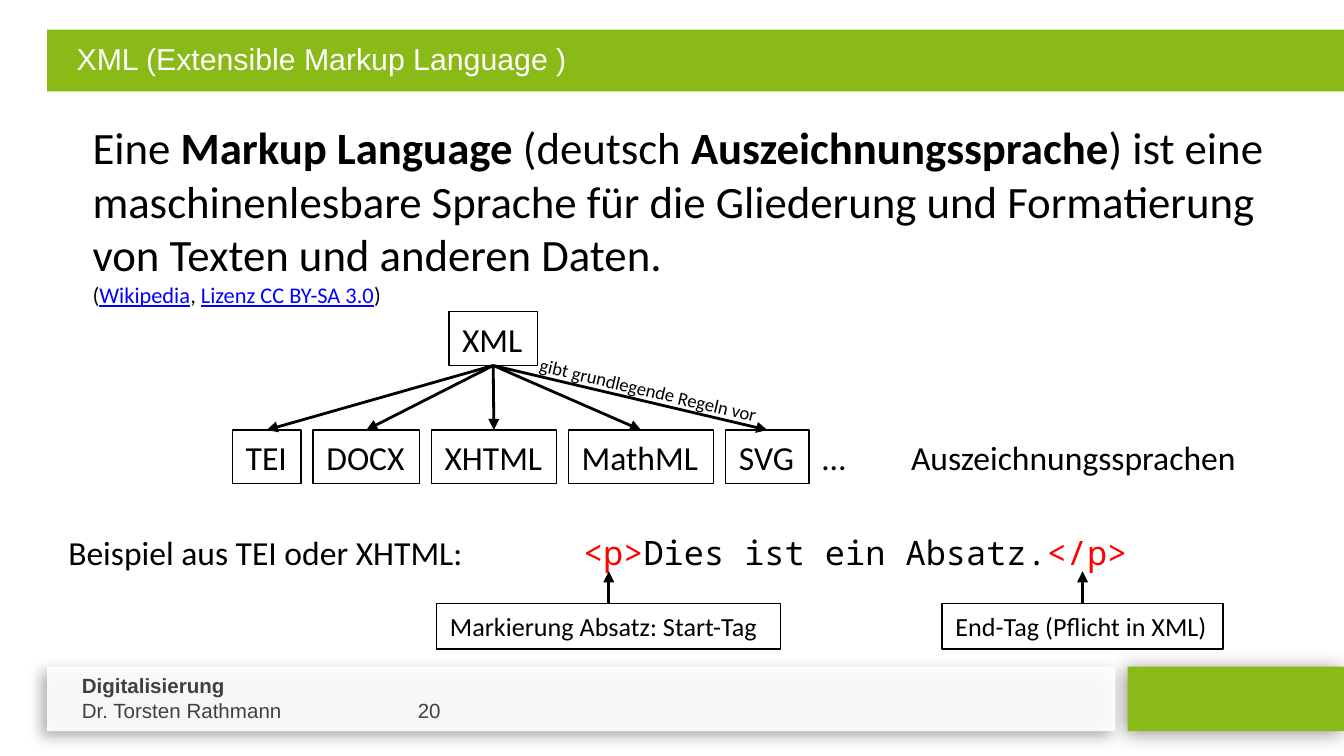
from lxml import etree
from pptx import Presentation
from pptx.dml.color import RGBColor
from pptx.enum.shapes import MSO_CONNECTOR, MSO_SHAPE
from pptx.enum.text import MSO_ANCHOR, MSO_AUTO_SIZE, PP_ALIGN
from pptx.oxml import parse_xml
from pptx.oxml.ns import nsdecls, qn
from pptx.util import Inches, Pt

RECTANGLE = MSO_SHAPE.RECTANGLE
STRAIGHT = MSO_CONNECTOR.STRAIGHT
LEFT = PP_ALIGN.LEFT
TOP = MSO_ANCHOR.TOP
NO_AUTOFIT = MSO_AUTO_SIZE.NONE

GREEN = RGBColor(0x89, 0xBA, 0x17)
WHITE = RGBColor(0xFF, 0xFF, 0xFF)
BLACK = RGBColor(0, 0, 0)
GRAY = RGBColor(0x40, 0x40, 0x40)
RED = RGBColor(0xFF, 0, 0)
LINK_BLUE = RGBColor(0, 0, 0xFF)

TOP_SITE, BOTTOM_SITE = 0, 2
LINE_HEIGHT = 0.4
FORMATS = [("TEI", 0.51), ("DOCX", 0.79), ("XHTML", 0.93), ("MathML", 1.08), ("SVG", 0.62)]
FORMAT_GAP = 0.09


def inches(*lengths):
    """Convert several lengths to Inches."""
    return [Inches(length) for length in lengths]


def style_font(font, size, color=BLACK, name="Calibri"):
    """Set size, colour and typeface of a font."""
    font.size = Pt(size)
    font.name = name
    font.color.rgb = color


def add_label(slide, box, text, size=18, wrap=False):
    """Add a one-paragraph text box and return it."""
    label = slide.shapes.add_textbox(*inches(*box))
    label.text_frame.word_wrap = wrap
    paragraph = label.text_frame.paragraphs[0]
    paragraph.text = text
    style_font(paragraph.font, size)
    return label


def add_framed_label(slide, box, text, size=18):
    """Add a thinly outlined rectangle with left-aligned text."""
    shape = slide.shapes.add_shape(RECTANGLE, *inches(*box))
    shape.shadow.inherit = False
    shape.fill.background()
    shape.line.color.rgb = BLACK
    shape.line.width = Pt(0.75)
    shape.text_frame.word_wrap = False
    paragraph = shape.text_frame.paragraphs[0]
    paragraph.text = text
    paragraph.alignment = LEFT
    style_font(paragraph.font, size)
    return shape


def add_panel(slide, box, color):
    """Add a plain filled rectangle without outline."""
    panel = slide.shapes.add_shape(RECTANGLE, *inches(*box))
    panel.shadow.inherit = False
    panel.fill.solid()
    panel.fill.fore_color.rgb = color
    panel.line.fill.background()
    return panel


def add_shadow(panel, blur, distance, angle, opacity):
    """Give a panel an outer shadow, in points, degrees and percent."""
    effects = panel._element.spPr.find(qn("a:effectLst"))
    effects.append(parse_xml(
        f'<a:outerShdw {nsdecls("a")} blurRad="{Pt(blur)}" dist="{Pt(distance)}" '
        f'dir="{angle * 60000}" algn="tl" rotWithShape="0"><a:srgbClr val="000000">'
        f'<a:alpha val="{opacity * 1000}"/></a:srgbClr></a:outerShdw>'))


def add_arrow(slide, source, site, x, y):
    """Add an arrow from a side of the source shape to a point."""
    arrow = slide.shapes.add_connector(STRAIGHT, *inches(x, y, x, y))
    arrow.begin_connect(source, site)
    arrow.line.color.rgb = BLACK
    arrow.line.width = Pt(1.5)
    line = arrow._element.spPr.find(qn("a:ln"))
    etree.SubElement(line, qn("a:tailEnd"), type="triangle")
    etree.SubElement(arrow._element.spPr, qn("a:effectLst"))
    return arrow


def add_header(slide, box):
    """Place the title over its green bar."""
    left, top, width, height = box
    bar = add_panel(slide, box, GREEN)
    title = slide.shapes.title
    title._element.addprevious(bar._element)
    title.left, title.top, title.width, title.height = inches(left, top, width, height - 0.11)
    frame = title.text_frame
    frame.auto_size = NO_AUTOFIT
    frame.vertical_anchor = TOP
    frame.margin_left, frame.margin_top, frame.margin_bottom = inches(0.22, 0.08, 0.05)
    paragraph = frame.paragraphs[0]
    paragraph.text = "XML (Extensible Markup Language )"
    paragraph.alignment = LEFT
    style_font(paragraph.font, 16.2, WHITE, "Arial")


def add_footer(slide, box):
    """Place the footer panels with course, author and page number."""
    left, top, width, height = box
    green_width = 1.61
    green = add_panel(slide, (left + width - green_width, top, green_width, height), GREEN)
    add_shadow(green, 10.8, 2, 142, 42)
    pale = add_panel(slide, (left, top, 7.95, height), WHITE)
    color = pale._element.spPr.find(qn("a:solidFill"))[0]
    etree.SubElement(color, qn("a:alpha"), val="91000")
    add_shadow(pale, 7.5, 4, 145, 34)
    label = add_label(slide, (left + 0.16, top, 5.98, height), "Digitalisierung", 11, True)
    author = label.text_frame.add_paragraph()
    author.text = "Dr. Torsten Rathmann\t20"
    tabs = etree.SubElement(author._p.get_or_add_pPr(), qn("a:tabLst"))
    etree.SubElement(tabs, qn("a:tab"), pos=str(Inches(2.5)), algn="l")
    for paragraph in label.text_frame.paragraphs:
        style_font(paragraph.font, 11, GRAY, "Arial")
    label.text_frame.paragraphs[0].font.bold = True


def add_definition(slide, box):
    """Place the definition followed by its small source line."""
    label = slide.shapes.add_textbox(*inches(*box))
    label.text_frame.word_wrap = True
    paragraph = label.text_frame.paragraphs[0]
    paragraph.space_after = Pt(18)
    for text, bold in [
        ("Eine ", False),
        ("Markup Language", True),
        (" (deutsch ", False),
        ("Auszeichnungssprache", True),
        (") ist eine maschinenlesbare Sprache für die Gliederung und "
         "Formatierung von Texten und anderen Daten. ", False),
    ]:
        run = paragraph.add_run()
        run.text = text
        style_font(run.font, 24)
        run.font.bold = bold
    paragraph.add_line_break()
    for text, linked in [("(", False), ("Wikipedia", True), (", ", False),
                         ("Lizenz CC BY-SA 3.0", True), (")", False)]:
        run = paragraph.add_run()
        run.text = text
        style_font(run.font, 12, LINK_BLUE if linked else BLACK)
        run.font.underline = linked


def add_language_tree(slide, box):
    """Place XML above the markup languages that follow its rules."""
    left, top, width, height = box
    row_top = top + height - LINE_HEIGHT
    root = add_framed_label(slide, (left + 1.61, top, 0.66, LINE_HEIGHT), "XML")
    x = left
    for name, name_width in FORMATS:
        child = add_framed_label(slide, (x, row_top, name_width, LINE_HEIGHT), name)
        arrow = add_arrow(slide, root, BOTTOM_SITE, x + name_width / 2, row_top)
        arrow.end_connect(child, TOP_SITE)
        x += name_width + FORMAT_GAP
    rule = add_label(slide, (left + 2.17, top + 0.45, 1.86, 0.27),
                     "gibt grundlegende Regeln vor", 10, True)
    rule.rotation = 13.3
    add_label(slide, (x - FORMAT_GAP, row_top, 0.38, LINE_HEIGHT), "…")
    add_label(slide, (left + width - 2.65, row_top, 2.65, LINE_HEIGHT), "Auszeichnungssprachen")


def add_example(slide, box):
    """Place the example line with its start and end tag explained below."""
    left, top, width, height = box
    add_label(slide, (left, top, 3.17, LINE_HEIGHT), "Beispiel aus TEI oder XHTML:")
    code = slide.shapes.add_textbox(*inches(left + 3.83, top, 4.27, LINE_HEIGHT))
    code.text_frame.word_wrap = False
    for text, color in [("<p>", RED), ("Dies ist ein Absatz.", BLACK), ("</p>", RED)]:
        run = code.text_frame.paragraphs[0].add_run()
        run.text = text
        style_font(run.font, 18, color, "Noto Sans Mono")
    note_height = 0.34
    for text, offset, note_width in [("Markierung Absatz: Start-Tag", 2.84, 2.56),
                                     ("End-Tag (Pflicht in XML)", width - 2.09, 2.09)]:
        x = left + offset
        note = add_framed_label(
            slide, (x, top + height - note_height, note_width, note_height), text, 14)
        add_arrow(slide, note, TOP_SITE, x + note_width / 2, top + 0.34)


def main():
    """Build the slide and save the presentation."""
    presentation = Presentation()
    presentation.slide_width = Inches(10)
    presentation.slide_height = presentation.slide_width * 9 // 16
    slide = presentation.slides.add_slide(presentation.slide_layouts[5])
    add_footer(slide, (0.35, 4.96, 9.65, 0.48))
    add_header(slide, (0.35, 0.22, 9.69, 0.46))
    add_definition(slide, (0.59, 0.84, 9.02, 1.51))
    add_language_tree(slide, (1.73, 2.32, 7.6, 1.28))
    add_example(slide, (0.41, 3.91, 8.69, 0.92))
    presentation.save("out.pptx")


if __name__ == "__main__":
    main()
